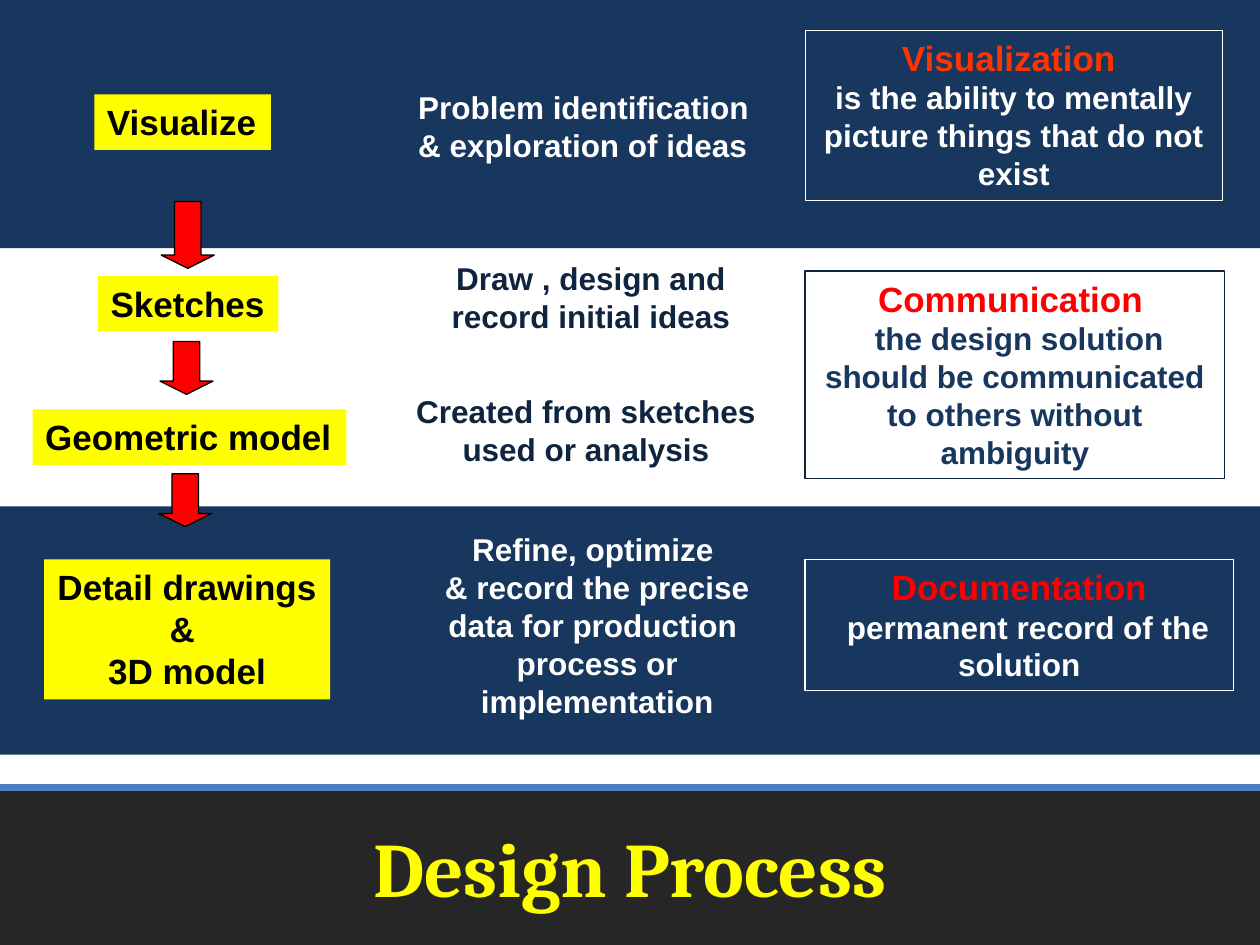
from pptx import Presentation
from pptx.dml.color import RGBColor
from pptx.enum.shapes import MSO_CONNECTOR, MSO_SHAPE
from pptx.enum.text import MSO_ANCHOR, MSO_AUTO_SIZE, PP_ALIGN
from pptx.oxml.ns import qn
from pptx.util import Emu, Pt
from lxml.etree import SubElement

EMU_PER_PX = 9144  # 100 px to the inch
WIDTH, HEIGHT = 1000, 750

WHITE = RGBColor(0xFF, 0xFF, 0xFF)
BLACK = RGBColor(0x00, 0x00, 0x00)
CHARCOAL = RGBColor(0x26, 0x26, 0x26)
RULE_BLUE = RGBColor(0x4B, 0x7E, 0xBC)
NAVY = RGBColor(0x17, 0x37, 0x5E)
INK = RGBColor(0x0F, 0x24, 0x3E)
YELLOW = RGBColor(0xFF, 0xFF, 0x00)
RED = RGBColor(0xFF, 0x00, 0x00)
ORANGE_RED = RGBColor(0xFF, 0x33, 0x00)

LEFT, CENTER = PP_ALIGN.LEFT, PP_ALIGN.CENTER

# A phase is a band: box, band fill, outline colour, stages, definition.
# A stage is (label box, label lines, note box, note lines, ink, wrap, alignments).
# Boxes inside a phase are relative to its top left corner.
PHASES = [
    ((0, 0, WIDTH, 197), NAVY, WHITE,
     [((75, 75, 140, 44), ["Visualize"], LEFT,
       (322, 65, 285, 71), ["Problem identification", "& exploration of ideas"],
       WHITE, LEFT, False)],
     ((639, 24, 331, 135),
      [[("Visualization ", 20, ORANGE_RED)],
       [("is the ability to mentally picture things that do not exist", 18, WHITE)]])),
    ((0, 197, WIDTH, 205), None, INK,
     [((78, 22, 143, 44), ["Sketches"], LEFT,
       (311, 4, 316, 71), ["Draw , design and record initial ideas"],
       INK, CENTER, True),
      ((26, 128, 249, 44), ["Geometric model"], LEFT,
       (319, 109, 292, 71), ["Created from sketches", "used or analysis"],
       INK, CENTER, False)],
     ((639, 18, 333, 165),
      [[("Communication", 20, RED), (" ", 18, NAVY)],
       [(" the design solution should be communicated to others without ambiguity",
         18, NAVY)]])),
    ((0, 402, WIDTH, 197), NAVY, WHITE,
     [((35, 42, 227, 111), ["Detail drawings", "& ", "3D model"], CENTER,
       (326, 14, 296, 162),
       ["Refine, optimize ",
        "& record the precise data for production  process or implementation"],
       WHITE, CENTER, True)],
     ((639, 42, 340, 104),
      [[("Documentation", 20, RED)],
       [("  ", 18, RED), ("permanent record of the solution", 18, WHITE)]])),
]
ARROWS = [(128, 160, 42, 53), (127, 271, 42, 42), (126, 376, 42, 42)]


def px(length):
    return Emu(length * EMU_PER_PX)


def place(box, origin=(0, 0)):
    """Turn a box relative to origin into EMU."""
    left, top, width, height = box
    return px(origin[0] + left), px(origin[1] + top), px(width), px(height)


def add_run(paragraph, text, size, color, font="Arial"):
    run = paragraph.add_run()
    run.text = text
    run.font.name = font
    run.font.size = Pt(size)
    run.font.bold = True
    run.font.color.rgb = color


def add_block(slide, frame, color, shape=MSO_SHAPE.RECTANGLE):
    block = slide.shapes.add_shape(shape, *frame)
    block.shadow.inherit = False
    block.fill.solid()
    block.fill.fore_color.rgb = color
    block.line.fill.background()
    return block


def add_text(slide, frame, paragraphs, align, wrap):
    """Add a text box; each paragraph is a list of (text, size, colour) runs."""
    box = slide.shapes.add_textbox(*frame)
    text = box.text_frame
    text.word_wrap = wrap
    text.auto_size = MSO_AUTO_SIZE.SHAPE_TO_FIT_TEXT
    for index, runs in enumerate(paragraphs):
        paragraph = text.add_paragraph() if index else text.paragraphs[0]
        paragraph.alignment = align
        for run in runs:
            add_run(paragraph, *run)
    return box


def add_stage(slide, origin, stage):
    label_box, label, label_align, note_box, note, ink, note_align, wrap = stage
    tag = add_text(slide, place(label_box, origin),
                   [[(line, 20, BLACK)] for line in label], label_align, False)
    tag.fill.solid()
    tag.fill.fore_color.rgb = YELLOW
    add_text(slide, place(note_box, origin),
             [[(line, 18, ink)] for line in note], note_align, wrap)


def add_phase(slide, box, fill, outline, stages, definition):
    origin = box[:2]
    if fill is not None:
        add_block(slide, place(box), fill)
    for stage in stages:
        add_stage(slide, origin, stage)
    definition_box, paragraphs = definition
    panel = add_text(slide, place(definition_box, origin), paragraphs, CENTER, True)
    panel.line.color.rgb = outline
    panel.line.width = Pt(0.75)


def add_arrow(slide, box):
    arrow = add_block(slide, place(box), RED, MSO_SHAPE.DOWN_ARROW)
    arrow.adjustments[0] = 0.5
    arrow.adjustments[1] = 0.25
    arrow.line.color.rgb = BLACK
    arrow.line.width = Pt(0.75)


def add_title_bar(slide, box):
    left, top, width, height = box
    add_block(slide, place(box), CHARCOAL)
    rule = slide.shapes.add_connector(MSO_CONNECTOR.STRAIGHT, px(left), px(top),
                                      px(left + width), px(top))
    rule.line.color.rgb = RULE_BLUE
    rule.line.width = Pt(4)
    SubElement(rule.element.spPr, qn("a:effectLst"))

    title = slide.shapes.title
    title.left, title.top, title.width, title.height = place(
        (50, 0, width - 100, height), (left, top))
    title.text_frame.vertical_anchor = MSO_ANCHOR.MIDDLE
    heading = title.text_frame.paragraphs[0]
    heading.alignment = CENTER
    add_run(heading, "Design Process", 44, YELLOW, "Cambria")
    title.element.getparent().append(title.element)  # in front of the bar


def main():
    deck = Presentation()
    deck.slide_width, deck.slide_height = px(WIDTH), px(HEIGHT)
    slide = deck.slides.add_slide(deck.slide_layouts[5])
    slide.background.fill.solid()
    slide.background.fill.fore_color.rgb = WHITE

    add_title_bar(slide, (0, 625, WIDTH, 125))
    for phase in PHASES:
        add_phase(slide, *phase)
    for box in ARROWS:
        add_arrow(slide, box)
    deck.save("out.pptx")


if __name__ == "__main__":
    main()
